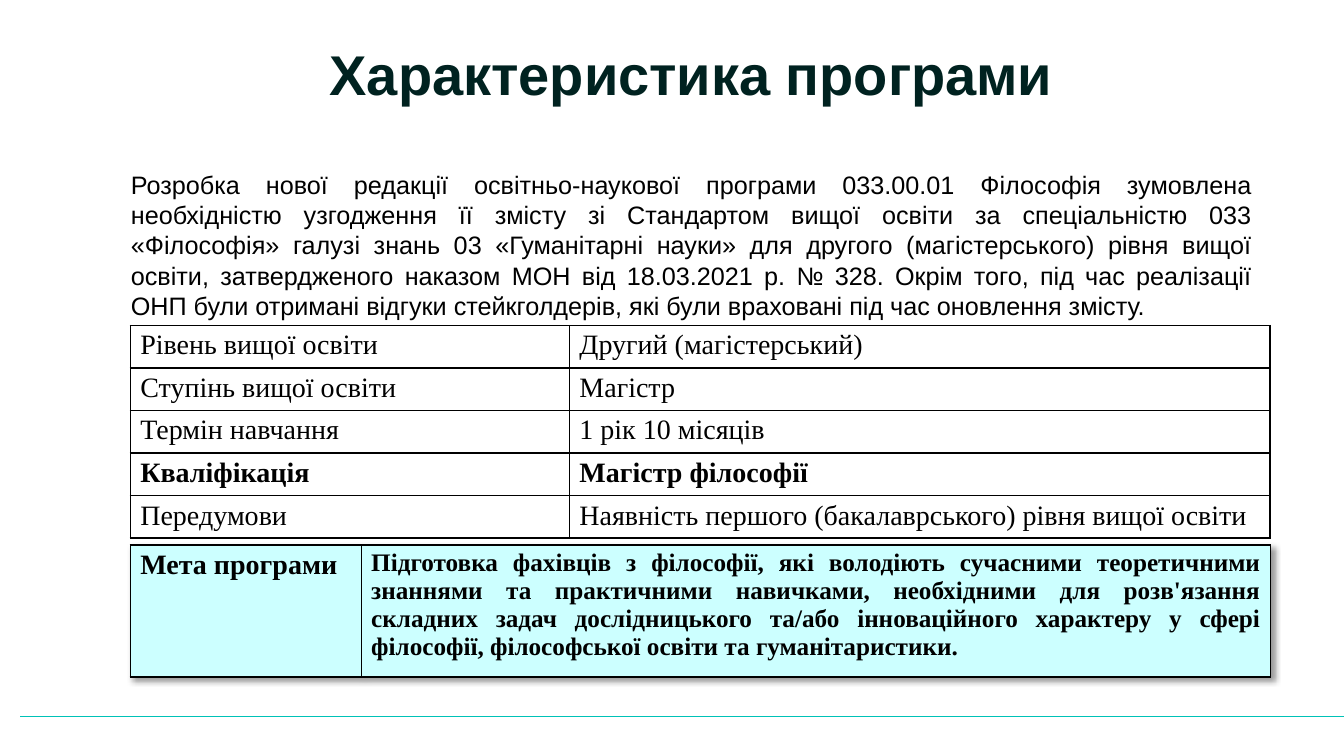
"""Build the slide describing the master's programme in philosophy."""
from lxml import etree
from pptx import Presentation
from pptx.dml.color import RGBColor
from pptx.enum.shapes import MSO_CONNECTOR
from pptx.enum.text import MSO_ANCHOR, PP_ALIGN
from pptx.oxml import parse_xml
from pptx.oxml.ns import nsdecls, qn
from pptx.util import Pt


def color(value):
    """Turn a hex string into a colour."""
    return RGBColor.from_string(value)


def write(frame, text, alignment, size, name, bold=False, ink="000000"):
    """Put one formatted paragraph into a text frame."""
    frame.word_wrap = True
    paragraph = frame.paragraphs[0]
    paragraph.text = text
    paragraph.alignment = alignment
    for attribute, value in {"size": Pt(size), "name": name, "bold": bold}.items():
        setattr(paragraph.font, attribute, value)
    paragraph.font.color.rgb = color(ink)


presentation = Presentation()
presentation.slide_width, presentation.slide_height = Pt(960), Pt(540)
slide = presentation.slides.add_slide(presentation.slide_layouts[6])

footer_line = slide.shapes.add_connector(MSO_CONNECTOR.STRAIGHT, Pt(14.4), Pt(511.7), Pt(960), Pt(511.7))
footer_line.line.color.rgb = color("00C2B7")
footer_line.line.width = Pt(0.75)
etree.SubElement(footer_line._element.spPr, qn("a:effectLst"))

title = slide.shapes.add_textbox(Pt(92.2), Pt(22.3), Pt(802.8), Pt(60.5))
title.text_frame.vertical_anchor = MSO_ANCHOR.MIDDLE
write(title.text_frame, "Характеристика програми", PP_ALIGN.CENTER, 40, "Arial", True, "002220")

introduction = slide.shapes.add_textbox(Pt(86.4), Pt(117.4), Pt(815), Pt(105.8))
write(
    introduction.text_frame,
    "Розробка нової редакції освітньо-наукової програми 033.00.01 Філософія зумовлена "
    "необхідністю узгодження її змісту зі Стандартом вищої освіти за спеціальністю 033 "
    "«Філософія» галузі знань 03 «Гуманітарні науки» для другого (магістерського) рівня "
    "вищої освіти, затвердженого наказом МОН від 18.03.2021 р. № 328. Окрім того, під час "
    "реалізації ОНП були отримані відгуки стейкголдерів, які були враховані під час "
    "оновлення змісту.",
    PP_ALIGN.JUSTIFY, 18, "Arial",
)

goal = (
    "Підготовка фахівців з філософії, які володіють сучасними теоретичними знаннями та "
    "практичними навичками, необхідними для розв'язання складних задач дослідницького та/або "
    "інноваційного характеру у сфері філософії, філософської освіти та гуманітаристики."
)
facts = [
    ("Рівень вищої освіти", "Другий (магістерський)"),
    ("Ступінь вищої освіти", "Магістр"),
    ("Термін навчання", "1 рік 10 місяців"),
    ("Кваліфікація", "Магістр філософії"),
    ("Передумови", "Наявність першого (бакалаврського) рівня вищої освіти"),
]
tables = [
    {"rows": [("Мета програми", goal)], "top": 389.3, "height": 94.3,
     "widths": (165, 649.7), "sizes": (20, 18), "fill": "CCFFFF",
     "alignments": (PP_ALIGN.LEFT, PP_ALIGN.JUSTIFY)},
    {"rows": facts, "top": 232.4, "height": 27.6,
     "widths": (313.7, 500.4), "sizes": (20, 20), "fill": None,
     "alignments": (PP_ALIGN.JUSTIFY, PP_ALIGN.JUSTIFY)},
]
bold_labels = ("Мета програми", "Кваліфікація")

for layout in tables:
    rows = layout["rows"]
    table = slide.shapes.add_table(
        len(rows), 2, Pt(93), Pt(layout["top"]),
        Pt(sum(layout["widths"])), Pt(layout["height"] * len(rows)),
    ).table
    table.first_row = table.horz_banding = False
    for column, width in zip(table.columns, layout["widths"]):
        column.width = Pt(width)
    if layout["fill"]:
        table._tbl.tblPr.insert(0, parse_xml(
            f'<a:effectLst {nsdecls("a")}><a:outerShdw blurRad="50800" dist="38100" dir="2700000" '
            'algn="tl" rotWithShape="0"><a:srgbClr val="000000"><a:alpha val="40000"/></a:srgbClr>'
            '</a:outerShdw></a:effectLst>'))
    for row_index, texts in enumerate(rows):
        table.rows[row_index].height = Pt(layout["height"])
        for column_index, text in enumerate(texts):
            cell = table.cell(row_index, column_index)
            for side, margin in {"left": 7.2, "right": 7.2, "top": 3.2, "bottom": 3.2}.items():
                setattr(cell, f"margin_{side}", Pt(margin))
            write(cell.text_frame, text, layout["alignments"][column_index],
                  layout["sizes"][column_index], "Times New Roman", texts[0] in bold_labels)
            properties = cell._tc.get_or_add_tcPr()
            for edge in ("lnL", "lnR", "lnT", "lnB"):
                properties.append(parse_xml(
                    f'<a:{edge} {nsdecls("a")} w="12700"><a:solidFill><a:srgbClr val="000000"/>'
                    f'</a:solidFill></a:{edge}>'))
            if layout["fill"]:
                cell.fill.solid()
                cell.fill.fore_color.rgb = color(layout["fill"])
            else:
                cell.fill.background()

presentation.save("out.pptx")
